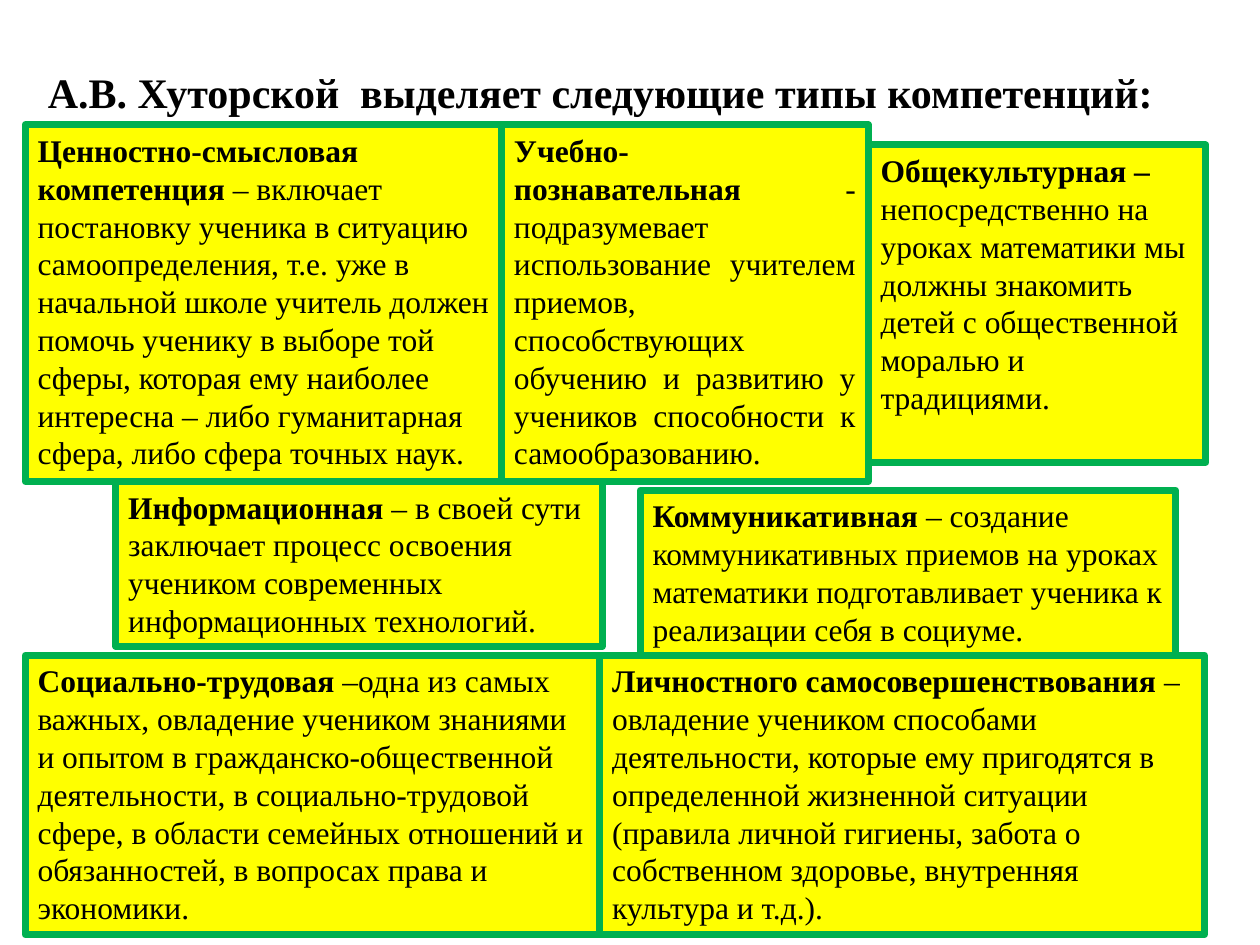
import pptx
import pptx.dml.color
import pptx.enum.shapes
import pptx.enum.text
import pptx.util

Pt = pptx.util.Pt
ALIGN = pptx.enum.text.PP_ALIGN
FONT = "Times New Roman"
LEFT_EDGE, TOP_ROW, BOTTOM_ROW = 14.4, 71.3, 374.4

COMPETENCES = [
    ((LEFT_EDGE, TOP_ROW, 272.2, 203.8), ALIGN.LEFT, "Ценностно-смысловая компетенция",
     " – включает постановку ученика в ситуацию самоопределения, т.е. уже в начальной школе "
     "учитель должен помочь ученику в выборе той сферы, которая ему наиболее интересна – "
     "либо гуманитарная сфера, либо сфера точных наук."),
    ((286.6, TOP_ROW, 209.5, 203.8), ALIGN.JUSTIFY, "Учебно-познавательная",
     " - подразумевает использование учителем приемов, способствующих обучению и развитию "
     "у учеников способности к самообразованию."),
    ((496.1, 82.8, 193, 181.4), ALIGN.LEFT, "Общекультурная – ",
     "непосредственно на уроках математики мы должны знакомить детей с общественной "
     "моралью и традициями."),
    ((66.2, 275.1, 277.9, 94.3), ALIGN.LEFT, "Информационная",
     " – в своей сути заключает процесс освоения учеником современных информационных "
     "технологий."),
    ((365.8, 280.1, 306, 94.3), ALIGN.LEFT, "Коммуникативная ",
     "– создание коммуникативных приемов на уроках математики подготавливает ученика к "
     "реализации себя в социуме."),
    ((LEFT_EDGE, BOTTOM_ROW, 328.3, 159.8), ALIGN.LEFT, "Социально-трудовая ",
     "–одна из самых важных, овладение учеником знаниями и опытом в "
     "гражданско-общественной деятельности, в социально-трудовой сфере, в области семейных "
     "отношений и обязанностей, в вопросах права и экономики."),
    ((342.7, BOTTOM_ROW, 345.6, 159.8), ALIGN.LEFT, "Личностного самосовершенствования ",
     "– овладение учеником способами деятельности, которые ему пригодятся в определенной "
     "жизненной ситуации (правила личной гигиены, забота о собственном здоровье, внутренняя "
     "культура и т.д.)."),
]


def color(hex_value):
    """Turn a hex string into a colour."""
    return pptx.dml.color.RGBColor.from_string(hex_value)


def add_run(paragraph, text, size, bold):
    """Append one black run to a paragraph."""
    run = paragraph.add_run()
    run.text = text
    run.font.name = FONT
    run.font.size = Pt(size)
    run.font.bold = bold
    run.font.color.rgb = color("000000")


def prepare_text(holder, align):
    """Set wrapping, anchor and alignment, and return the first paragraph."""
    frame = holder.text_frame
    frame.word_wrap = True
    frame.vertical_anchor = pptx.enum.text.MSO_ANCHOR.TOP
    paragraph = frame.paragraphs[0]
    paragraph.alignment = align
    return paragraph


def add_heading(slide, text):
    """Add the slide heading."""
    heading = slide.shapes.add_textbox(Pt(20.2), Pt(34.5), Pt(663.8), Pt(48))
    add_run(prepare_text(heading, ALIGN.LEFT), text, 24, True)


def add_competence(slide, bounds, align, term, description):
    """Add a framed box with a bold term and its description."""
    box = slide.shapes.add_shape(
        pptx.enum.shapes.MSO_SHAPE.RECTANGLE, *(Pt(length) for length in bounds))
    box.shadow.inherit = False
    box.fill.solid()
    box.fill.fore_color.rgb = color("FFFF00")
    box.line.color.rgb = color("00B050")
    box.line.width = Pt(4)
    paragraph = prepare_text(box, align)
    add_run(paragraph, term, 18, True)
    add_run(paragraph, description, 18, False)


def main():
    """Build and save the slide."""
    deck = pptx.Presentation()
    deck.slide_width, deck.slide_height = Pt(720), Pt(540)
    slide = deck.slides.add_slide(deck.slide_layouts[6])
    add_heading(slide, "А.В. Хуторской  выделяет следующие типы компетенций:")
    for competence in COMPETENCES:
        add_competence(slide, *competence)
    deck.save("out.pptx")


if __name__ == "__main__":
    main()
